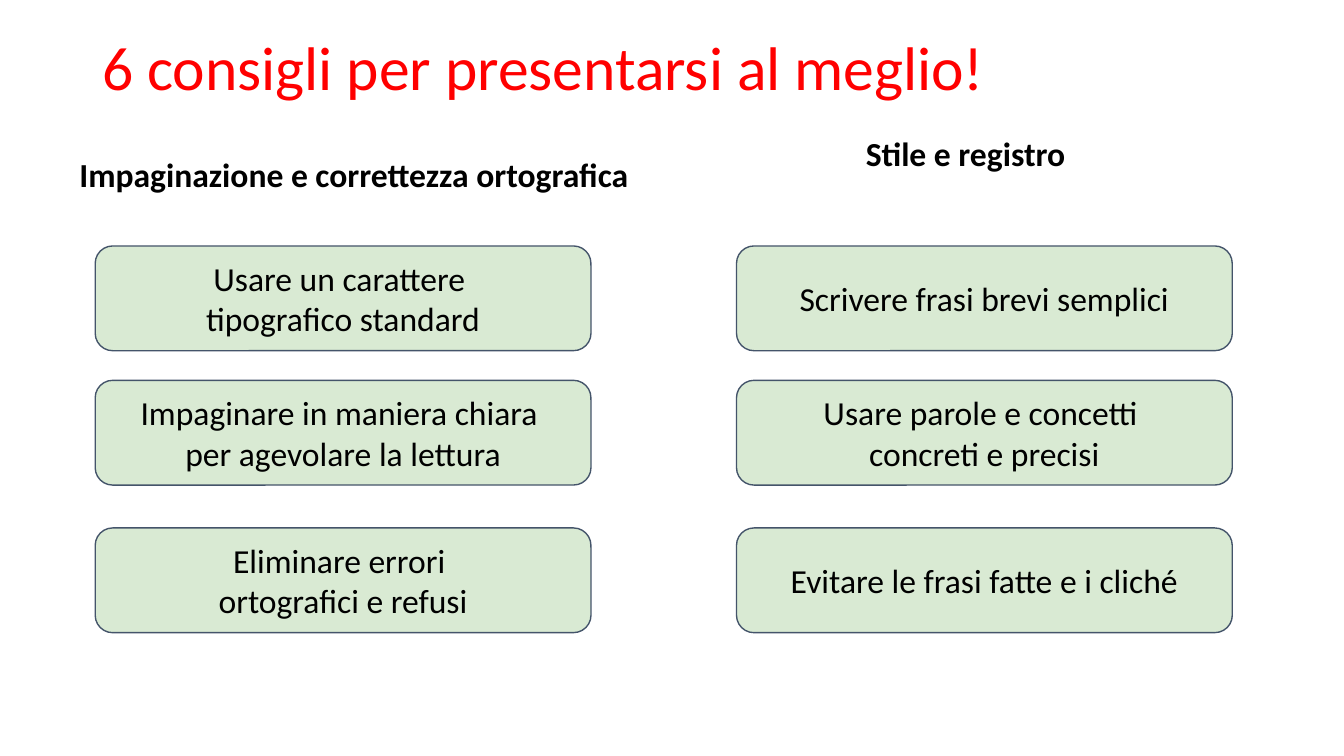
from pptx import Presentation
from pptx.dml.color import RGBColor
from pptx.enum.shapes import MSO_SHAPE
from pptx.enum.text import MSO_ANCHOR, MSO_AUTO_SIZE, PP_ALIGN
from pptx.util import Cm, Pt

COLORS = {"title": "FF0000", "text": "000000", "box": "D9EAD3", "outline": "44546A"}


def set_attributes(target, values):
    for name, value in values.items():
        setattr(target, name, value)


def write_text(shape, text, inset, anchor, paragraph_format, size, color, bold=False):
    frame = shape.text_frame
    frame.text = text
    frame_format = {"margin_" + side: Cm(inset) for side in ("left", "top", "right", "bottom")}
    frame_format.update(word_wrap=True, auto_size=MSO_AUTO_SIZE.NONE, vertical_anchor=anchor)
    set_attributes(frame, frame_format)
    for paragraph in frame.paragraphs:
        set_attributes(paragraph, {"space_before": Pt(0), **paragraph_format})
        for run in paragraph.runs:
            set_attributes(run.font, {"name": "Calibri", "size": Pt(size), "bold": bold})
            run.font.color.rgb = RGBColor.from_string(COLORS[color])


presentation = Presentation()
set_attributes(presentation, {"slide_width": Cm(25.4), "slide_height": Cm(14.29)})
slide = presentation.slides.add_slide(presentation.slide_layouts.get_by_name("Comparison"))
placeholders = {shape.placeholder_format.idx: shape for shape in slide.placeholders}
for index in (2, 4, 10, 11, 12):
    if index in placeholders:
        element = placeholders[index].element
        element.getparent().remove(element)

title = slide.shapes.title
set_attributes(title, {"left": Cm(1.75), "top": Cm(0.76), "width": Cm(21.9), "height": Cm(1.14)})
write_text(title, "6 consigli per presentarsi al meglio!", 0.18, MSO_ANCHOR.MIDDLE,
           {"alignment": PP_ALIGN.LEFT, "line_spacing": 0.9}, 33, "title")

headings = [
    (1, "Impaginazione e correttezza ortografica", 1.32, 2.72, 11.84, PP_ALIGN.LEFT, 1.0),
    (3, "Stile e registro", 12.85, 2.41, 10.8, PP_ALIGN.CENTER, 0.9),
]
for index, text, left, top, width, alignment, spacing in headings:
    heading = placeholders[index]
    set_attributes(heading, {"left": Cm(left), "top": Cm(top), "width": Cm(width), "height": Cm(1.73)})
    write_text(heading, text, 0.18, MSO_ANCHOR.TOP,
               {"alignment": alignment, "line_spacing": spacing}, 18, "text", bold=True)

row_tops = [4.65, 7.19, 9.98]
tips = {
    1.8: [
        "Usare un carattere \vtipografico standard",
        "Impaginare in maniera chiara \vper agevolare la lettura",
        "Eliminare errori \nortografici e refusi",
    ],
    13.92: [
        "Scrivere frasi brevi semplici",
        "Usare parole e concetti \nconcreti e precisi",
        "Evitare le frasi fatte e i cliché",
    ],
}
for left, column in tips.items():
    for top, text in zip(row_tops, column):
        box = slide.shapes.add_shape(
            MSO_SHAPE.ROUNDED_RECTANGLE, Cm(left), Cm(top), Cm(9.37), Cm(1.98))
        box.shadow.inherit = False
        box.fill.solid()
        box.fill.fore_color.rgb = RGBColor.from_string(COLORS["box"])
        box.line.color.rgb = RGBColor.from_string(COLORS["outline"])
        box.line.width = Pt(0.75)
        write_text(box, text, 0.25, MSO_ANCHOR.MIDDLE,
                   {"alignment": PP_ALIGN.CENTER}, 18, "text")

presentation.save("out.pptx")
